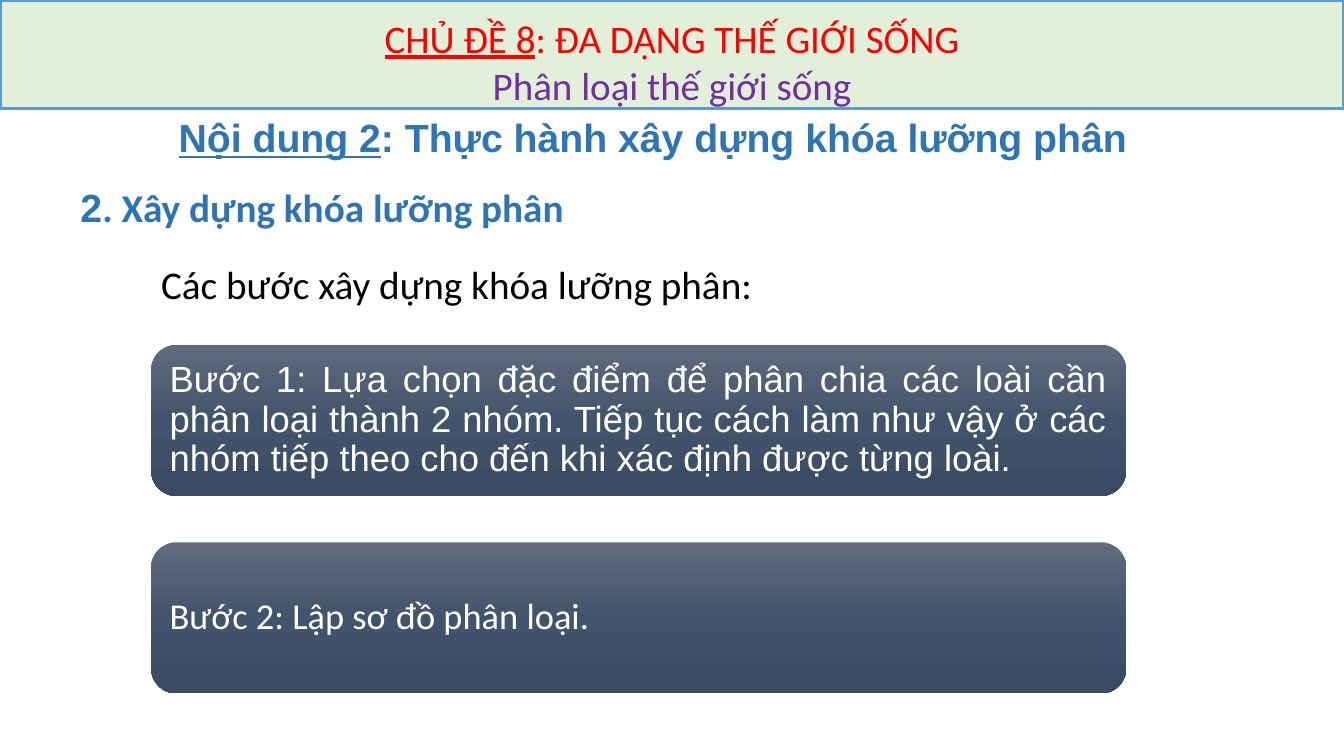
import copy

import pptx
import pptx.dml.color
import pptx.enum.dml
import pptx.enum.shapes
import pptx.enum.text
import pptx.util
from pptx.util import Inches

HUES = {
    "band": "E2F0D9",
    "edge": "5B9BD5",
    "red": "FF0000",
    "purple": "7030A0",
    "blue": "2E75B6",
    "black": "000000",
    "white": "FFFFFF",
}
SHADES = [(0, "606B7D"), (0.5, "42546C"), (1, "394A62")]
ALIGN = pptx.enum.text.PP_ALIGN
ANCHOR = pptx.enum.text.MSO_ANCHOR


def rgb(code):
    return pptx.dml.color.RGBColor.from_string(code)


def write(shape, runs, size=28, font="Calibri", hue="black", bold=False,
          align=ALIGN.LEFT, anchor=ANCHOR.TOP, space=1.0,
          inset=(0.1, 0.05, 0.1, 0.05)):
    """Fill one paragraph; each run is (text, changes), "\n" breaks the line."""
    frame = shape.text_frame
    frame.word_wrap = True
    frame.auto_size = pptx.enum.text.MSO_AUTO_SIZE.NONE
    frame.vertical_anchor = anchor
    frame.margin_left, frame.margin_top, frame.margin_right, frame.margin_bottom = map(Inches, inset)
    para = frame.paragraphs[0]
    para.alignment = align
    para.line_spacing = space
    for text, extra in runs:
        if text == "\n":
            para.add_line_break()
            continue
        run = para.add_run()
        run.text = text
        run.font.size = pptx.util.Pt(size)
        run.font.name = extra.get("font", font)
        run.font.bold = bold
        run.font.underline = extra.get("under", False)
        run.font.color.rgb = rgb(HUES[extra.get("hue", hue)])


def add_head(slide, runs):
    """Title band across the top."""
    head = slide.shapes.title
    head.left, head.top = Inches(0), Inches(0)
    head.width, head.height = Inches(13.33), Inches(1.08)
    head.fill.solid()
    head.fill.fore_color.rgb = rgb(HUES["band"])
    head.line.color.rgb = rgb(HUES["edge"])
    head.line.width = pptx.util.Pt(2.25)
    write(head, runs, size=27.9, hue="red", align=ALIGN.CENTER,
          anchor=ANCHOR.MIDDLE, inset=(0.1, 0.18, 0.1, 0.05))


def add_label(slide, box, runs, **style):
    label = slide.shapes.add_textbox(*map(Inches, box))
    write(label, runs, **style)


def add_step(slide, top, text, **style):
    """Rounded card with a vertical gradient."""
    card = slide.shapes.add_shape(
        pptx.enum.shapes.MSO_SHAPE.ROUNDED_RECTANGLE,
        Inches(1.5), Inches(top), Inches(9.67), Inches(1.5))
    card.shadow.inherit = False
    card.line.fill.background()
    card.fill.gradient()
    card.fill.gradient_angle = 270
    # A new gradient has two stops; the third is added in the XML
    stops = card.fill._fill._gradFill.gsLst
    stops.append(copy.deepcopy(stops[-1]))
    for stop, (place, code) in zip(card.fill.gradient_stops, SHADES):
        stop.position = place
        stop.color.rgb = rgb(code)
    write(card, [(text, {})], size=26, hue="white", anchor=ANCHOR.MIDDLE,
          space=0.9, inset=(0.11,) * 4, **style)


def main():
    deck = pptx.Presentation()
    deck.slide_width, deck.slide_height = Inches(13.33), Inches(7.5)
    slide = deck.slides.add_slide(deck.slide_layouts.get_by_name("Title Only"))

    # Headings
    add_head(slide, [
        ("CHỦ ĐỀ 8", {"under": True}),
        (": ĐA DẠNG THẾ GIỚI SỐNG", {}),
        ("\n", {}),
        ("Phân loại thế giới sống", {"hue": "purple"}),
    ])
    add_label(slide, (1.36, 1.08, 10.23, 0.57), [
        ("Nội dung 2", {"under": True}),
        (": Thực hành xây dựng khóa lưỡng phân", {}),
    ], font="Arial", hue="blue", bold=True, align=ALIGN.CENTER)
    add_label(slide, (0.7, 1.77, 6.47, 0.57), [
        ("2", {"font": "Arial"}),
        (". Xây dựng khóa lưỡng phân", {}),
    ], hue="blue", bold=True)
    add_label(slide, (1.5, 2.53, 7, 0.57),
              [("Các bước xây dựng khóa lưỡng phân:", {})])

    # Steps
    steps = [
        ("Bước 1: Lựa chọn đặc điểm để phân chia các loài cần phân loại thành "
         "2 nhóm. Tiếp tục cách làm như vậy ở các nhóm tiếp theo cho đến khi "
         "xác định được từng loài.", {"font": "Arial", "align": ALIGN.JUSTIFY}),
        ("Bước 2: Lập sơ đồ phân loại.", {}),
    ]
    for rank, (text, style) in enumerate(steps):
        add_step(slide, 3.42 + 1.96 * rank, text, **style)

    deck.save("out.pptx")


if __name__ == "__main__":
    main()
